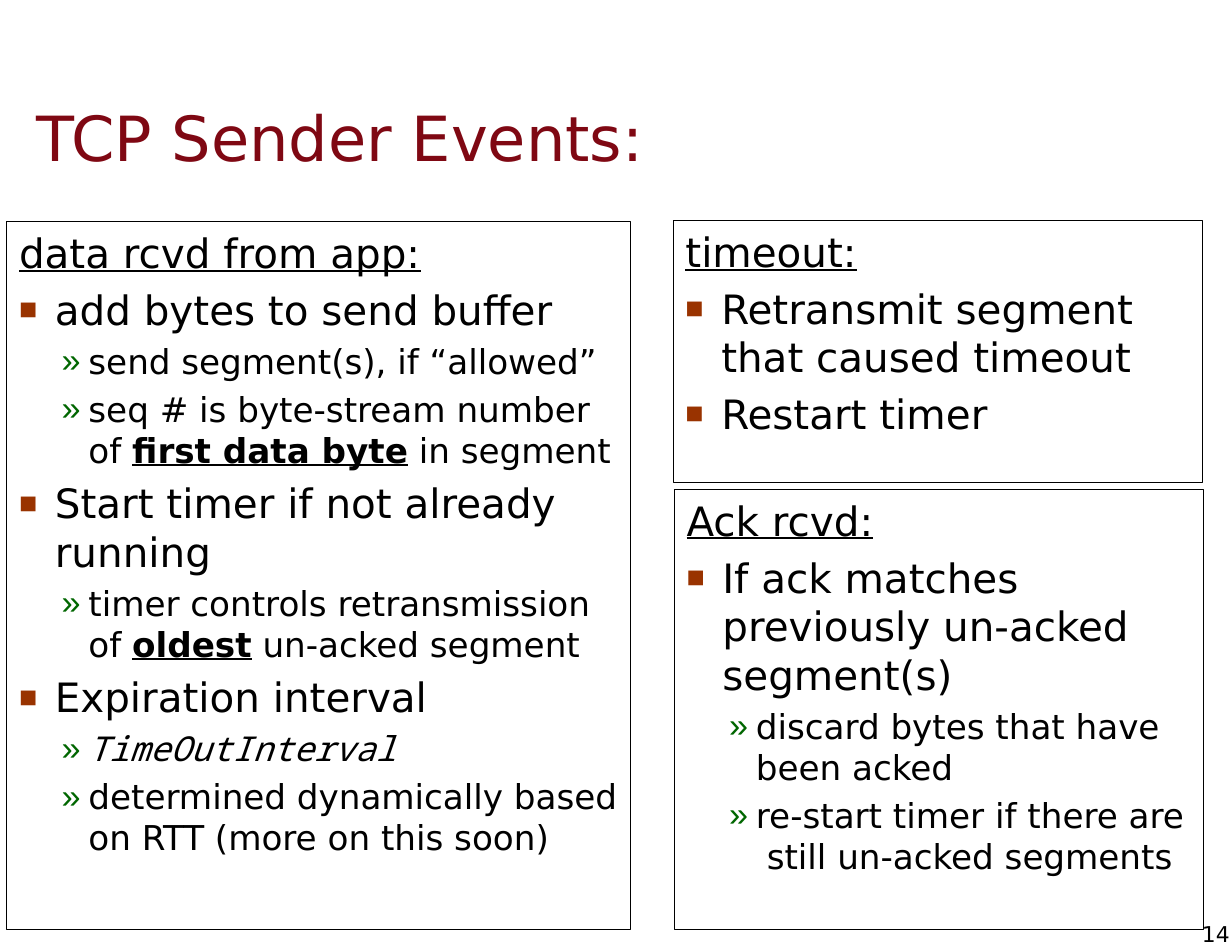
"""Build the TCP sender events slide."""
from typing import NamedTuple

from lxml import etree
from pptx import Presentation
from pptx.dml.color import RGBColor
from pptx.enum.text import MSO_ANCHOR, MSO_AUTO_SIZE, PP_ALIGN
from pptx.oxml.ns import qn
from pptx.util import Inches, Pt

TOP, MIDDLE = MSO_ANCHOR.TOP, MSO_ANCHOR.MIDDLE
NO_AUTOFIT = MSO_AUTO_SIZE.NONE
LEFT, RIGHT = PP_ALIGN.LEFT, PP_ALIGN.RIGHT
SANS, MONO = "DejaVu Sans", "Noto Sans Mono"
BLACK, TITLE_RED = "000000", "7F0813"


class Level(NamedTuple):
    depth: int
    size: int
    margin: float
    hanging: float
    bullet: str = ""
    bullet_color: str = ""
    bullet_percent: int = 100


class Span(NamedTuple):
    text: str
    bold: bool = False
    italic: bool = False
    underline: bool = False
    font: str = SANS


class Line(NamedTuple):
    level: Level
    spans: list[Span]


class Box(NamedTuple):
    left: float
    top: float
    width: float
    height: float


HEADING = Level(0, 26, 0.32, 0.32)
POINT = Level(0, 26, 0.32, 0.32, "■", "993300", 75)
DETAIL = Level(1, 22, 0.62, 0.24, "»", "006600")


def heading(text: str) -> Line:
    return Line(HEADING, [Span(text, underline=True)])


def point(text: str) -> Line:
    return Line(POINT, [Span(text)])


def detail(*spans: Span) -> Line:
    return Line(DETAIL, list(spans))


def strong(text: str) -> Span:
    return Span(text, bold=True, underline=True)


DATA_BOX = Box(0.06, 1.98, 5.57, 6.32)
DATA_LINES = [
    heading("data rcvd from app:"),
    point("add bytes to send buffer"),
    detail(Span("send segment(s), if “allowed”")),
    detail(Span("seq # is byte-stream number of "), strong("first data byte"),
           Span(" in segment")),
    point("Start timer if not already running"),
    detail(Span("timer controls retransmission of "), strong("oldest"),
           Span(" un-acked segment")),
    point("Expiration interval"),
    detail(Span("TimeOutInterval", italic=True, font=MONO)),
    detail(Span("determined dynamically based on RTT (more on this soon)")),
]
TIMEOUT_BOX = Box(6.01, 1.97, 4.73, 2.34)
TIMEOUT_LINES = [
    heading("timeout:"),
    point("Retransmit segment that caused timeout"),
    point("Restart timer"),
]
ACK_BOX = Box(6.02, 4.37, 4.73, 3.93)
ACK_LINES = [
    heading("Ack rcvd:"),
    point("If ack matches previously un-acked segment(s)"),
    detail(Span("discard bytes that have been acked")),
    detail(Span("re-start timer if there are  still un-acked segments")),
]


def rgb(color: str) -> RGBColor:
    return RGBColor.from_string(color)


def place(shape, box: Box) -> None:
    shape.left, shape.top, shape.width, shape.height = map(Inches, box)


def set_frame(frame, anchor, horizontal: float, vertical: float, wrap: bool = True) -> None:
    frame.auto_size = NO_AUTOFIT
    frame.word_wrap = wrap
    frame.vertical_anchor = anchor
    frame.margin_left = frame.margin_right = Inches(horizontal)
    frame.margin_top = frame.margin_bottom = Inches(vertical)


def add_span(paragraph, span: Span, size: int, color: str = BLACK) -> None:
    run = paragraph.add_run()
    run.text = span.text
    font = run.font
    font.name, font.size = span.font, Pt(size)
    font.bold, font.italic, font.underline = span.bold, span.italic, span.underline
    font.color.rgb = rgb(color)


def set_bullet(paragraph, level: Level) -> None:
    properties = paragraph._p.get_or_add_pPr()
    properties.set("marL", str(Inches(level.margin)))
    properties.set("indent", str(-Inches(level.hanging)))
    if not level.bullet:
        etree.SubElement(properties, qn("a:buNone"))
        return
    color = etree.SubElement(properties, qn("a:buClr"))
    etree.SubElement(color, qn("a:srgbClr"), val=level.bullet_color)
    etree.SubElement(properties, qn("a:buSzPct"), val=str(level.bullet_percent * 1000))
    etree.SubElement(properties, qn("a:buFont"), typeface="Arial")
    etree.SubElement(properties, qn("a:buChar"), char=level.bullet)


def fill_panel(shape, box: Box, lines: list[Line]) -> None:
    place(shape, box)
    shape.line.color.rgb = rgb(BLACK)
    shape.line.width = Pt(0.75)
    frame = shape.text_frame
    set_frame(frame, TOP, 0.11, 0.06)
    for index, line in enumerate(lines):
        paragraph = frame.add_paragraph() if index else frame.paragraphs[0]
        paragraph.level = line.level.depth
        set_bullet(paragraph, line.level)
        paragraph.alignment = LEFT
        paragraph.space_before = Pt(line.level.size * 0.2 if index else 0)
        for span in line.spans:
            add_span(paragraph, span, line.level.size)


def main() -> None:
    presentation = Presentation()
    presentation.slide_width, presentation.slide_height = Inches(11), Inches(8.5)
    slide = presentation.slides.add_slide(presentation.slide_layouts[3])
    title, data_panel, timeout_panel = slide.placeholders

    place(title, Box(0.22, 0.51, 9.81, 1.42))
    set_frame(title.text_frame, MIDDLE, 0.11, 0.06)
    title_paragraph = title.text_frame.paragraphs[0]
    title_paragraph.alignment = LEFT
    add_span(title_paragraph, Span("TCP Sender Events:"), 40, TITLE_RED)

    fill_panel(data_panel, DATA_BOX, DATA_LINES)
    fill_panel(timeout_panel, TIMEOUT_BOX, TIMEOUT_LINES)

    number = slide.shapes.add_textbox(*map(Inches, Box(10.64, 8.22, 0.34, 0.24)))
    set_frame(number.text_frame, MIDDLE, 0, 0, wrap=False)
    number_paragraph = number.text_frame.paragraphs[0]
    number_paragraph.alignment = RIGHT
    add_span(number_paragraph, Span("14"), 14)

    ack_panel = slide.shapes.add_textbox(*map(Inches, ACK_BOX))
    fill_panel(ack_panel, ACK_BOX, ACK_LINES)
    presentation.save("out.pptx")


if __name__ == "__main__":
    main()
